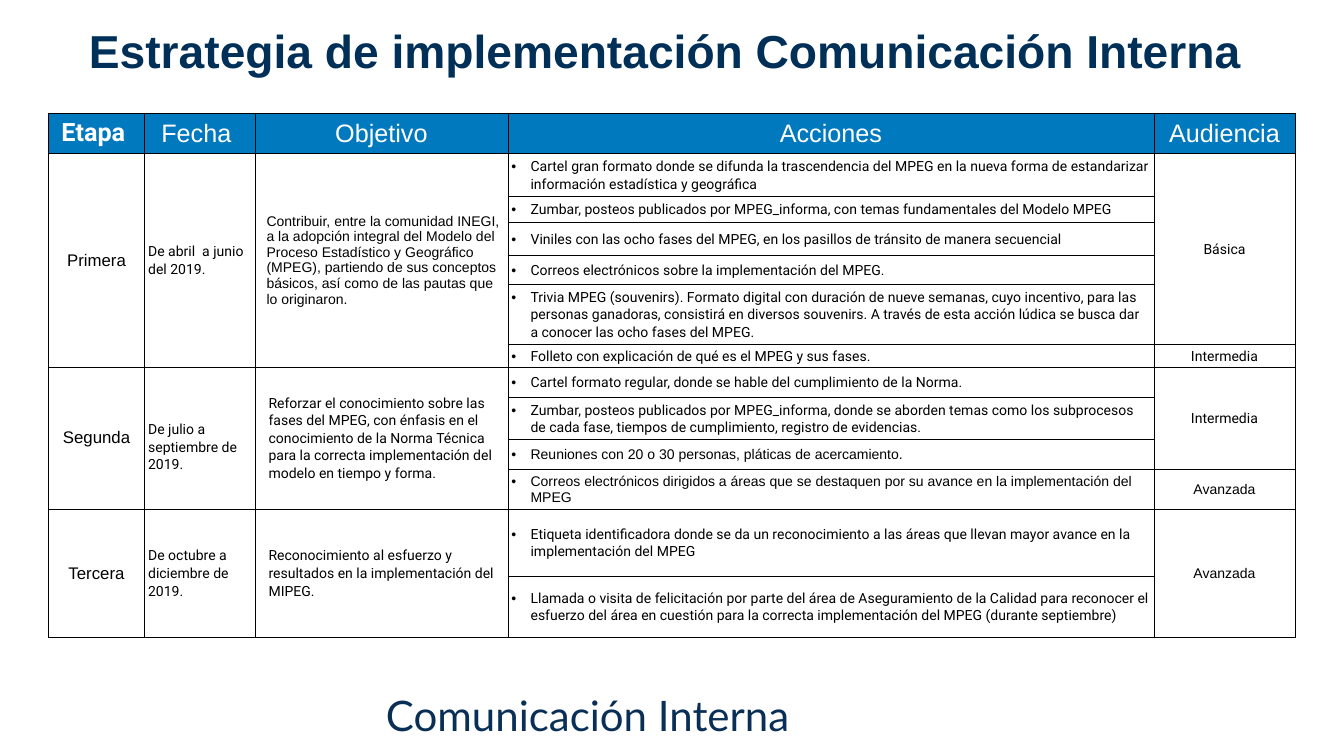
from lxml import etree
from pptx import Presentation, util as u
from pptx.dml.color import RGBColor
from pptx.enum import text as t
from pptx.oxml import ns

PX = 9144  # 100 px to the inch
NAVY, BLUE, WHITE, BLACK = "002F58", "0079BF", "FFFFFF", "000000"
LEFT, CENTER = t.PP_ALIGN.LEFT, t.PP_ALIGN.CENTER


def write(frame, content, font, size, color=BLACK, bold=False, align=LEFT,
          spacing=None, margins=(5, 5, 5, 5), indent=0, bullet=False):
    """Fill a text frame or table cell with one formatted paragraph."""
    sides = ("margin_left", "margin_top", "margin_right", "margin_bottom")
    for side, margin in zip(sides, margins):
        setattr(frame, side, margin * PX)
    body = getattr(frame, "text_frame", frame)
    paragraph = body.paragraphs[0]
    props = paragraph._p.get_or_add_pPr()
    if indent:
        props.set("marL", str(indent * PX))
        props.set("indent", str(-indent * PX if bullet else 0))
    if bullet:
        color_node = etree.SubElement(props, ns.qn("a:buClr"))
        etree.SubElement(color_node, ns.qn("a:srgbClr"), val=BLACK)
        etree.SubElement(props, ns.qn("a:buFont"), typeface="Arial")
        etree.SubElement(props, ns.qn("a:buChar"), char="•")
    paragraph.alignment = align
    if spacing:
        paragraph.line_spacing = spacing
    run = paragraph.add_run()
    run.text = content
    for key, value in {"name": font, "size": u.Pt(size), "bold": bold}.items():
        setattr(run.font, key, value)
    run.font.color.rgb = RGBColor.from_string(color)


def style_cell(cell, fill):
    """Black 1 pt borders, solid fill, middle anchor."""
    props = cell._tc.get_or_add_tcPr()
    for edge in ("lnL", "lnR", "lnT", "lnB"):
        line = etree.SubElement(props, ns.qn(f"a:{edge}"), w=str(u.Pt(1)))
        solid = etree.SubElement(line, ns.qn("a:solidFill"))
        etree.SubElement(solid, ns.qn("a:srgbClr"), val=BLACK)
    cell.fill.solid()
    cell.fill.fore_color.rgb = RGBColor.from_string(fill)
    cell.vertical_anchor = t.MSO_ANCHOR.MIDDLE


prs = Presentation()
prs.slide_width, prs.slide_height = 2667 * PX, 1500 * PX
slide = prs.slides.add_slide(prs.slide_layouts[5])

# Title and footer
title = slide.shapes.title
title.left, title.top, title.width, title.height = [n * PX for n in (157, 40, 2326, 184)]
footer = slide.shapes.add_textbox(*[n * PX for n in (761, 1363, 1854, 103)])
for heading in (title, footer):
    frame_format = {"word_wrap": True, "auto_size": t.MSO_AUTO_SIZE.NONE,
                    "vertical_anchor": t.MSO_ANCHOR.TOP}
    for key, value in frame_format.items():
        setattr(heading.text_frame, key, value)
write(title.text_frame, "Estrategia de implementación Comunicación Interna",
      "Arial", 66, NAVY, bold=True, align=CENTER)
write(footer.text_frame, "Comunicación Interna", "Lato", 60, "092F57")

# Table content
headers = ["Etapa ", "Fecha ", "Objetivo", "Acciones", "Audiencia"]
stages = [
    # name, date, date top margin, goal, goal font, goal indent, goal spacing, row count
    ("Primera", "De abril  a junio del 2019.", 0,
     "Contribuir, entre la comunidad INEGI, a la adopción integral del Modelo del Proceso "
     "Estadístico y Geográfico (MPEG), partiendo de sus conceptos básicos, así como de las "
     "pautas que lo originaron.", "Arial", 16, None, 6),
    ("Segunda", "De julio a septiembre de 2019.", 35,
     "Reforzar el conocimiento sobre las fases del MPEG, con énfasis en el conocimiento de la "
     "Norma Técnica para la correcta implementación del modelo en tiempo y forma.",
     "Roboto", 20, 1.07, 4),
    ("Tercera", "De octubre a diciembre de 2019.", 0,
     "Reconocimiento al esfuerzo y resultados en la implementación del MIPEG.",
     "Roboto", 20, 1.07, 2),
]
actions = [
    ("Cartel gran formato donde se difunda la trascendencia del MPEG en la nueva forma de "
     "estandarizar información estadística y geográfica", "Roboto"),
    ("Zumbar, posteos publicados por MPEG_informa, con temas fundamentales del Modelo MPEG",
     "Roboto"),
    ("Viniles con las ocho fases del MPEG, en los pasillos de tránsito de manera secuencial",
     "Roboto"),
    ("Correos electrónicos sobre la implementación del MPEG.", "Roboto"),
    ("Trivia MPEG (souvenirs). Formato digital con duración de nueve semanas, cuyo incentivo, "
     "para las personas ganadoras, consistirá en diversos souvenirs. A través de esta acción "
     "lúdica se busca dar a conocer las ocho fases del MPEG.", "Roboto"),
    ("Folleto con explicación de qué es el MPEG y sus fases.", "Roboto"),
    ("Cartel formato regular, donde se hable del cumplimiento de la Norma.", "Roboto"),
    ("Zumbar, posteos publicados por MPEG_informa, donde se aborden temas como los subprocesos "
     "de cada fase, tiempos de cumplimiento, registro de evidencias.", "Roboto"),
    ("Reuniones con 20 o 30 personas, pláticas de acercamiento.", "Arial"),
    ("Correos electrónicos dirigidos a áreas que se destaquen por su avance en la "
     "implementación del MPEG", "Arial"),
    ("Etiqueta identificadora donde se da un reconocimiento a las áreas que llevan mayor "
     "avance en la implementación del MPEG", "Roboto"),
    ("Llamada o visita de felicitación por parte del área de Aseguramiento de la Calidad para "
     "reconocer el esfuerzo del área en cuestión para la correcta implementación del MPEG "
     "(durante septiembre)", "Roboto"),
]
audiences = [("Básica", "Roboto", 5), ("Intermedia", "Roboto", 1), ("Intermedia", "Roboto", 3),
             ("Avanzada", "Arial", 1), ("Avanzada", "Arial", 2)]
column_widths = [191, 219, 502, 1282, 280]
row_heights = [81, 84, 52, 66, 57, 120, 44, 61, 83, 59, 79, 133, 122]

# Table grid
grid = slide.shapes.add_table(len(row_heights), len(column_widths), 96 * PX, 224 * PX,
                              sum(column_widths) * PX, sum(row_heights) * PX).table
for column, width in zip(grid.columns, column_widths):
    column.width = width * PX
for row, height in zip(grid.rows, row_heights):
    row.height = height * PX
for r in range(len(row_heights)):
    for c in range(len(column_widths)):
        style_cell(grid.cell(r, c), WHITE if r else BLUE)

# Header row
wide, tight = (10, 5, 10, 5), (7, 0, 7, 0)
for c, header in enumerate(headers):
    write(grid.cell(0, c), header, "Arial" if c else "Roboto", 36, WHITE, bold=c == 0,
          align=CENTER, margins=wide)

# Stage, date and goal, merged over the rows of each stage
r = 1
for stage, date, date_top, goal, goal_font, goal_indent, goal_spacing, count in stages:
    for c in range(3):
        grid.cell(r, c).merge(grid.cell(r + count - 1, c))
    write(grid.cell(r, 0), stage, "Arial", 24, align=CENTER, margins=wide)
    write(grid.cell(r, 1), date, "Roboto", 20, spacing=1.07, margins=(7, date_top, 7, 0))
    write(grid.cell(r, 2), goal, goal_font, 20, spacing=goal_spacing, margins=tight,
          indent=goal_indent)
    r += count

# Actions
for r, (action, font) in enumerate(actions, 1):
    write(grid.cell(r, 3), action, font, 20, spacing=1.07, margins=tight, indent=38, bullet=True)

# Audiences
r = 1
for audience, font, count in audiences:
    if count > 1:
        grid.cell(r, 4).merge(grid.cell(r + count - 1, 4))
    write(grid.cell(r, 4), audience, font, 20, align=CENTER, spacing=1.07, margins=tight)
    r += count

prs.save("out.pptx")
